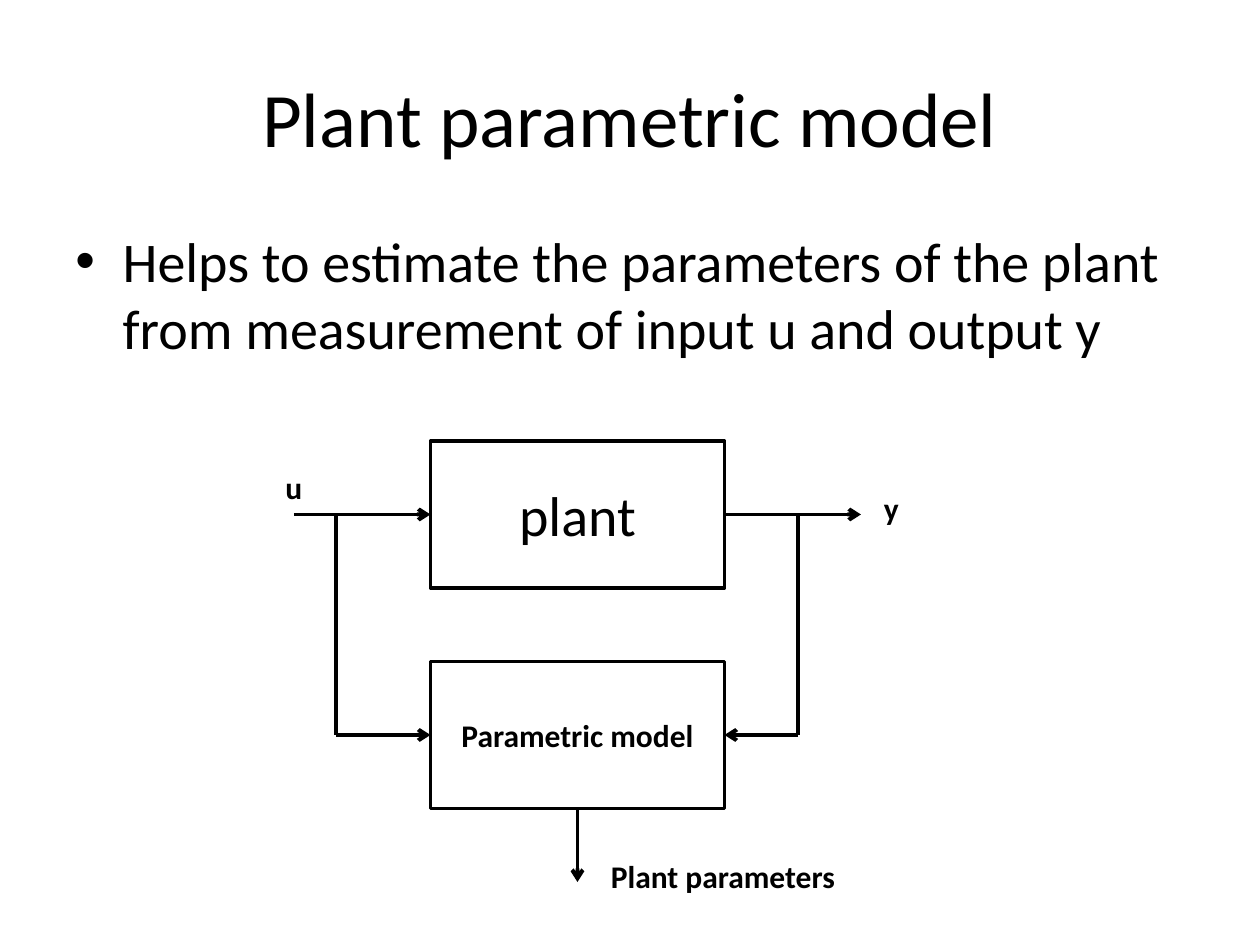
from lxml.etree import SubElement
from pptx import Presentation
from pptx.dml.color import RGBColor
from pptx.enum.shapes import MSO_CONNECTOR, MSO_SHAPE
from pptx.enum.text import MSO_ANCHOR, MSO_AUTO_SIZE, PP_ALIGN
from pptx.oxml.ns import qn
from pptx.util import Pt

PX = 7620
BLACK = RGBColor(0x00, 0x00, 0x00)
WHITE = RGBColor(0xFF, 0xFF, 0xFF)
TOP, LEFT, BOTTOM, RIGHT = range(4)


def write(tf, text, size=18, bold=False, align=PP_ALIGN.LEFT,
          anchor=MSO_ANCHOR.TOP, font="Calibri", color=BLACK):
    tf.word_wrap = True
    tf.vertical_anchor = anchor
    p = tf.paragraphs[0]
    p.alignment = align
    r = p.add_run()
    r.text = text
    r.font.name = font
    r.font.size = Pt(size)
    r.font.bold = bold
    r.font.color.rgb = color
    return p


class Diagram:
    ink, paper = BLACK, WHITE
    box_line, wire_line = Pt(2), Pt(2.25)

    def __init__(self, s):
        self.s = s

    def title(self, text, x, y, w, h):
        sp = self.s.shapes.title
        sp.left, sp.top, sp.width, sp.height = (v * PX for v in (x, y, w, h))
        write(sp.text_frame, text, size=44, align=PP_ALIGN.CENTER,
              anchor=MSO_ANCHOR.MIDDLE)

    def text(self, text, x, y, w, h, **style):
        sp = self.s.shapes.add_textbox(x * PX, y * PX, w * PX, h * PX)
        return write(sp.text_frame, text, **style)

    def label(self, text, x, y, w):
        sp = self.s.shapes.add_textbox(x * PX, y * PX, w * PX, 48 * PX)
        write(sp.text_frame, text, bold=True)
        sp.text_frame.auto_size = MSO_AUTO_SIZE.SHAPE_TO_FIT_TEXT

    def bullet(self, text, x, y, w, h, indent=45):
        p = self.text(text, x, y, w, h, size=32)
        p.space_before = Pt(6.4)
        pPr = p._p.get_or_add_pPr()
        pPr.set("marL", str(indent * PX))
        pPr.set("indent", str(-indent * PX))
        SubElement(pPr, qn("a:buFont"), typeface="Arial")
        SubElement(pPr, qn("a:buChar"), char="•")

    def box(self, text, x, y, w, h, **style):
        sp = self.s.shapes.add_shape(MSO_SHAPE.RECTANGLE,
                                     x * PX, y * PX, w * PX, h * PX)
        sp.shadow.inherit = False
        sp.fill.solid()
        sp.fill.fore_color.rgb = self.paper
        sp.line.color.rgb = self.ink
        sp.line.width = self.box_line
        write(sp.text_frame, text, align=PP_ALIGN.CENTER,
              anchor=MSO_ANCHOR.MIDDLE, **style)
        return sp

    def wire(self, x1, y1, x2, y2, arrow=True, begin=None, end=None):
        c = self.s.shapes.add_connector(MSO_CONNECTOR.STRAIGHT,
                                        x1 * PX, y1 * PX, x2 * PX, y2 * PX)
        c.line.color.rgb = self.ink
        c.line.width = self.wire_line
        if arrow:
            SubElement(c.line._get_or_add_ln(), qn("a:tailEnd"), type="arrow")
        SubElement(c._element.spPr, qn("a:effectLst"))
        if begin:
            c.begin_connect(*begin)
        if end:
            c.end_connect(*end)


def main():
    prs = Presentation()
    prs.slide_width, prs.slide_height = 1200 * PX, 900 * PX
    d = Diagram(prs.slides.add_slide(prs.slide_layouts[5]))

    d.title("Plant parametric model", 60, 36, 1080, 150)
    d.bullet("Helps to estimate the parameters of the plant from measurement "
             "of input u and output y", 60, 210, 1080, 594)

    x, w, h = 410, 280, 140
    plant_y, model_y = 420, 630
    right, mid = x + w, x + w // 2
    signal, branch = plant_y + h // 2, model_y + h // 2
    bottom = model_y + h
    tap_u, tap_y = 320, 760

    plant = d.box("plant", x, plant_y, w, h, size=32)
    model = d.box("Parametric model", x, model_y, w, h, bold=True)

    d.wire(x - 130, signal, x, signal, end=(plant, LEFT))
    d.wire(right, signal, right + 130, signal, begin=(plant, RIGHT))
    for tap, edge, side in ((tap_u, x, LEFT), (tap_y, right, RIGHT)):
        d.wire(tap, signal, tap, branch, arrow=False)
        d.wire(tap, branch, edge, branch, end=(model, side))
    d.wire(mid, bottom, mid, bottom + 70, begin=(model, BOTTOM))

    d.label("Plant parameters", 570, 810, 250)
    d.label("u", 260, 440, 50)
    d.label("y", 830, 460, 50)

    prs.save("out.pptx")


if __name__ == "__main__":
    main()
